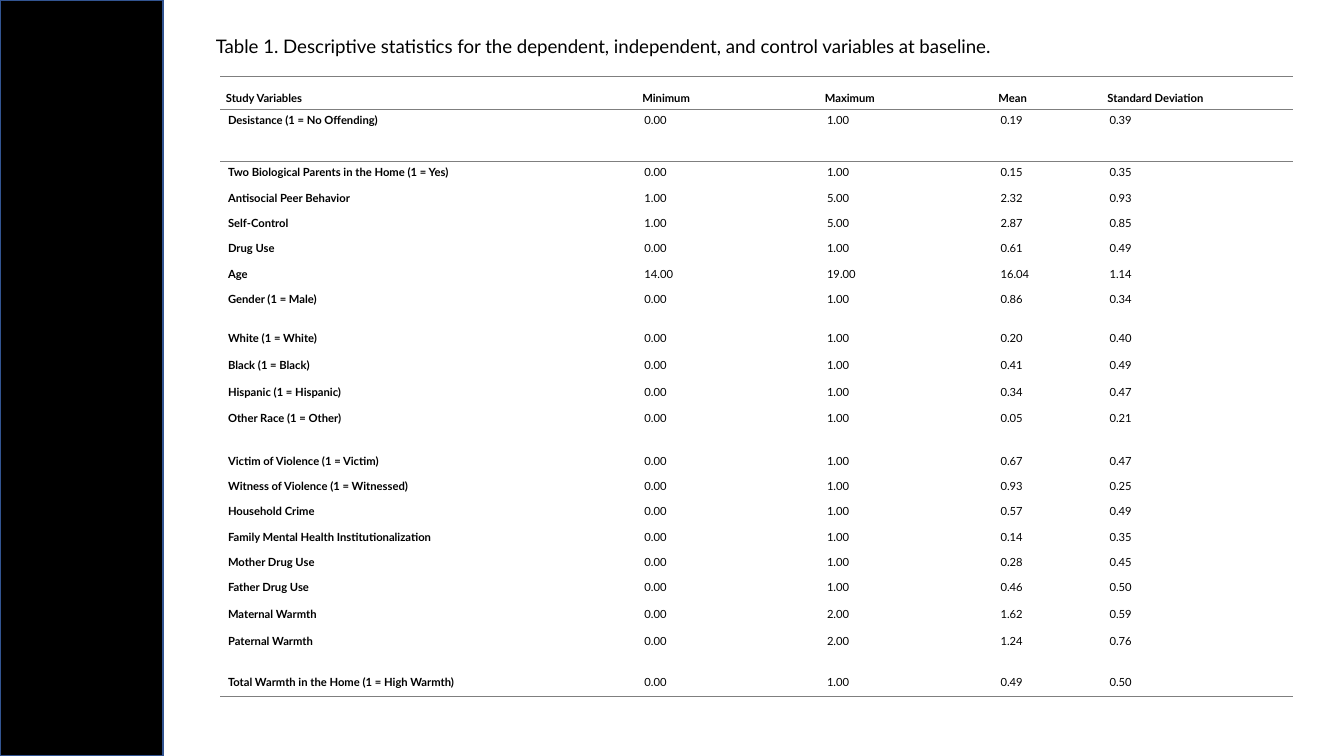
from lxml.etree import SubElement
from pptx import Presentation
from pptx.dml.color import RGBColor
from pptx.enum.shapes import MSO_SHAPE as Preset
from pptx.enum.text import MSO_AUTO_SIZE as AutoSize
from pptx.oxml.ns import qn
from pptx.util import Cm, Pt

BLACK = RGBColor(0x00, 0x00, 0x00)
NAVY = RGBColor(0x32, 0x54, 0x91)
GRAY = RGBColor(0x7F, 0x7F, 0x7F)
NO_GRID_STYLE = "{2D5ABB26-0587-4C30-8999-92F81FD0307C}"

TITLE = ("Table 1. Descriptive statistics for the dependent, independent, "
         "and control variables at baseline.")
HEADER = ("Study Variables", "Minimum", "Maximum", "Mean", "Standard Deviation")
BLOCKS = [
    [("Desistance (1 = No Offending)", "0.00", "1.00", "0.19", "0.39")],
    [("Two Biological Parents in the Home (1 = Yes)", "0.00", "1.00", "0.15", "0.35")],
    [("Antisocial Peer Behavior", "1.00", "5.00", "2.32", "0.93")],
    [("Self-Control", "1.00", "5.00", "2.87", "0.85")],
    [("Drug Use", "0.00", "1.00", "0.61", "0.49")],
    [("Age", "14.00", "19.00", "16.04", "1.14")],
    [("Gender (1 = Male)", "0.00", "1.00", "0.86", "0.34")],
    [("White (1 = White)", "0.00", "1.00", "0.20", "0.40"),
     ("Black (1 = Black)", "0.00", "1.00", "0.41", "0.49"),
     ("Hispanic (1 = Hispanic)", "0.00", "1.00", "0.34", "0.47"),
     ("Other Race (1 = Other)", "0.00", "1.00", "0.05", "0.21")],
    [("Victim of Violence (1 = Victim)", "0.00", "1.00", "0.67", "0.47")],
    [("Witness of Violence (1 = Witnessed)", "0.00", "1.00", "0.93", "0.25")],
    [("Household Crime", "0.00", "1.00", "0.57", "0.49")],
    [("Family Mental Health Institutionalization", "0.00", "1.00", "0.14", "0.35")],
    [("Mother Drug Use", "0.00", "1.00", "0.28", "0.45")],
    [("Father Drug Use", "0.00", "1.00", "0.46", "0.50"),
     ("Maternal Warmth", "0.00", "2.00", "1.62", "0.59"),
     ("Paternal Warmth", "0.00", "2.00", "1.24", "0.76")],
    [("Total Warmth in the Home (1 = High Warmth)", "0.00", "1.00", "0.49", "0.50")],
]
COLUMN_WIDTHS = (7.87, 3.45, 3.28, 2.06, 3.61)
ROW_HEIGHT = 0.48
TALL_ROWS = {1: 0.98, 8: 2.57, 14: 1.78}
RACE_ROW = 8


class SlideBuilder:
    font_name = "Lato"
    line_gap = Pt(7.2)

    def __init__(self, slide):
        self.slide = slide

    def apply(self, target, values):
        for name, value in values.items():
            setattr(target, name, value)

    def style_font(self, paragraph, size, bold=False):
        self.apply(paragraph.font, {"name": self.font_name, "size": Pt(size), "bold": bold})
        paragraph.font.color.rgb = BLACK

    def panel(self, left, top, width, height):
        shape = self.slide.shapes.add_shape(
            Preset.RECTANGLE, Cm(left), Cm(top), Cm(width), Cm(height))
        shape.shadow.inherit = False
        shape.fill.solid()
        shape.fill.fore_color.rgb = BLACK
        shape.line.color.rgb = NAVY
        shape.line.width = Pt(1)

    def title(self, text, left, top, width, height):
        box = self.slide.shapes.add_textbox(Cm(left), Cm(top), Cm(width), Cm(height))
        frame = box.text_frame
        self.apply(frame, {"word_wrap": True, "auto_size": AutoSize.SHAPE_TO_FIT_TEXT})
        frame.text = text
        self.style_font(frame.paragraphs[0], 10)

    def border(self, cell, side):
        properties = cell._tc.get_or_add_tcPr()
        line = SubElement(properties, qn(f"a:ln{side}"), w=str(Pt(0.75)))
        fill = SubElement(line, qn("a:solidFill"))
        SubElement(fill, qn("a:srgbClr"), val=str(GRAY))

    def cell(self, cell, lines, bold, sides, margins, line_spacing=None):
        self.apply(cell, {f"margin_{name}": Cm(value) for name, value in margins.items()})
        for side in sides:
            self.border(cell, side)
        cell.fill.background()
        cell.text_frame.text = "\n".join(lines)
        for index, paragraph in enumerate(cell.text_frame.paragraphs):
            if index:
                paragraph.space_before = self.line_gap
            if line_spacing:
                paragraph.line_spacing = line_spacing
            self.style_font(paragraph, 6, bold)

    def table(self, header, blocks, left, top):
        rows = [[header], *blocks]
        heights = [TALL_ROWS.get(index, ROW_HEIGHT) for index in range(len(rows))]
        frame = self.slide.shapes.add_table(
            len(rows), len(header), Cm(left), Cm(top),
            Cm(sum(COLUMN_WIDTHS)), Cm(sum(heights)))
        table = frame.table
        self.apply(table, {"first_row": False, "horz_banding": False})
        table._tbl.tblPr.find(qn("a:tableStyleId")).text = NO_GRID_STYLE
        for column, width in zip(table.columns, COLUMN_WIDTHS):
            column.width = Cm(width)
        for row, height in zip(table.rows, heights):
            row.height = Cm(height)
        borders = {0: "TB", 1: "T", len(rows) - 1: "B"}
        for row_index, block in enumerate(rows):
            is_header = row_index == 0
            side_margin = 0.11 if is_header else 0.15
            margins = {"left": side_margin, "right": side_margin,
                       "top": 0.33 if row_index == RACE_ROW else 0.08, "bottom": 0.08}
            for column_index, lines in enumerate(zip(*block)):
                self.cell(table.cell(row_index, column_index), lines,
                          is_header or column_index == 0,
                          borders.get(row_index, ""), margins,
                          Pt(13.1) if is_header else None)


def main():
    presentation = Presentation()
    presentation.slide_width = Cm(25.4)
    presentation.slide_height = Cm(14.29)
    builder = SlideBuilder(presentation.slides.add_slide(presentation.slide_layouts[6]))
    builder.panel(0, 0, 3.08, 14.29)
    builder.table(HEADER, BLOCKS, 4.16, 1.45)
    builder.title(TITLE, 3.83, 0.53, 20.57, 0.68)
    presentation.save("out.pptx")


if __name__ == "__main__":
    main()
